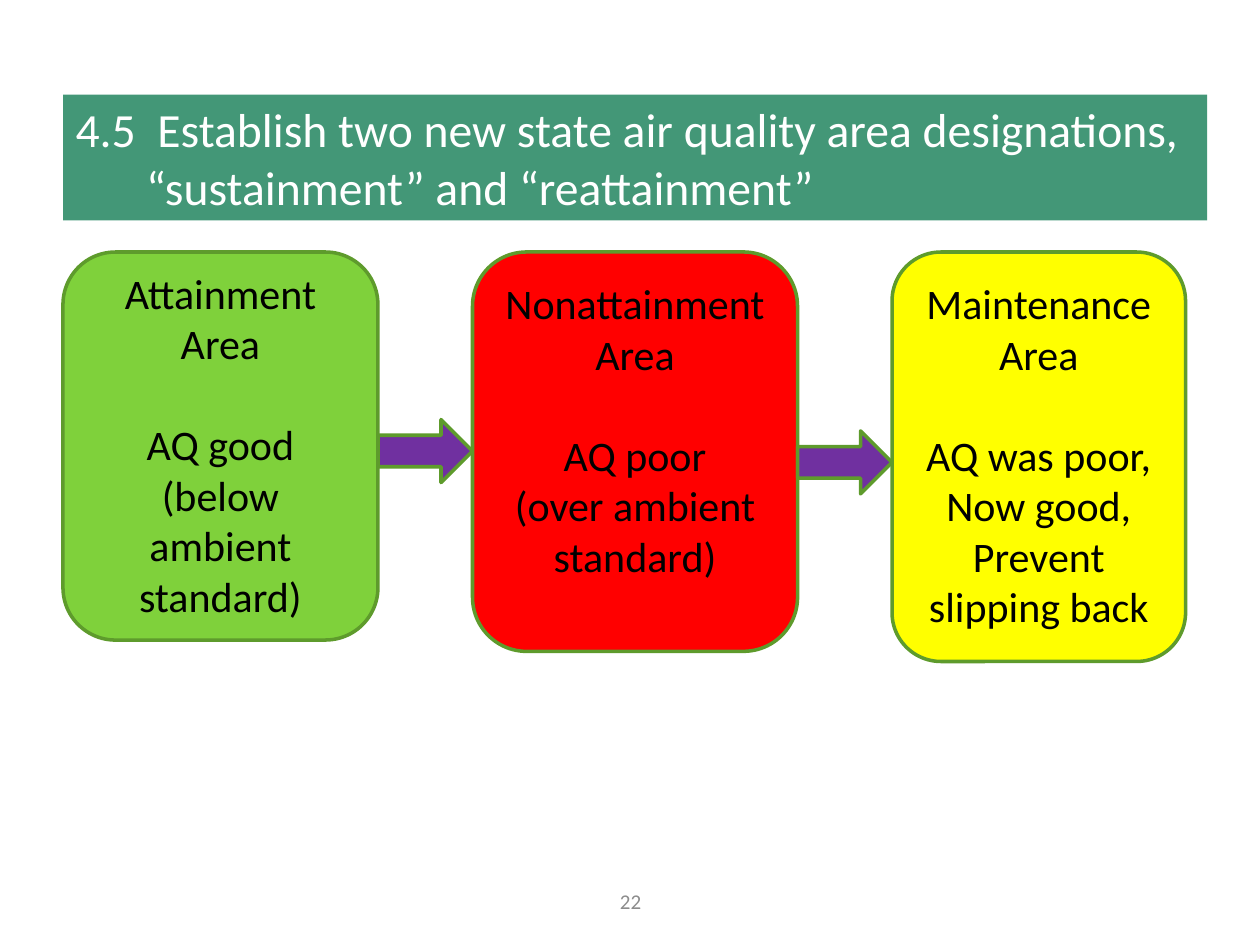
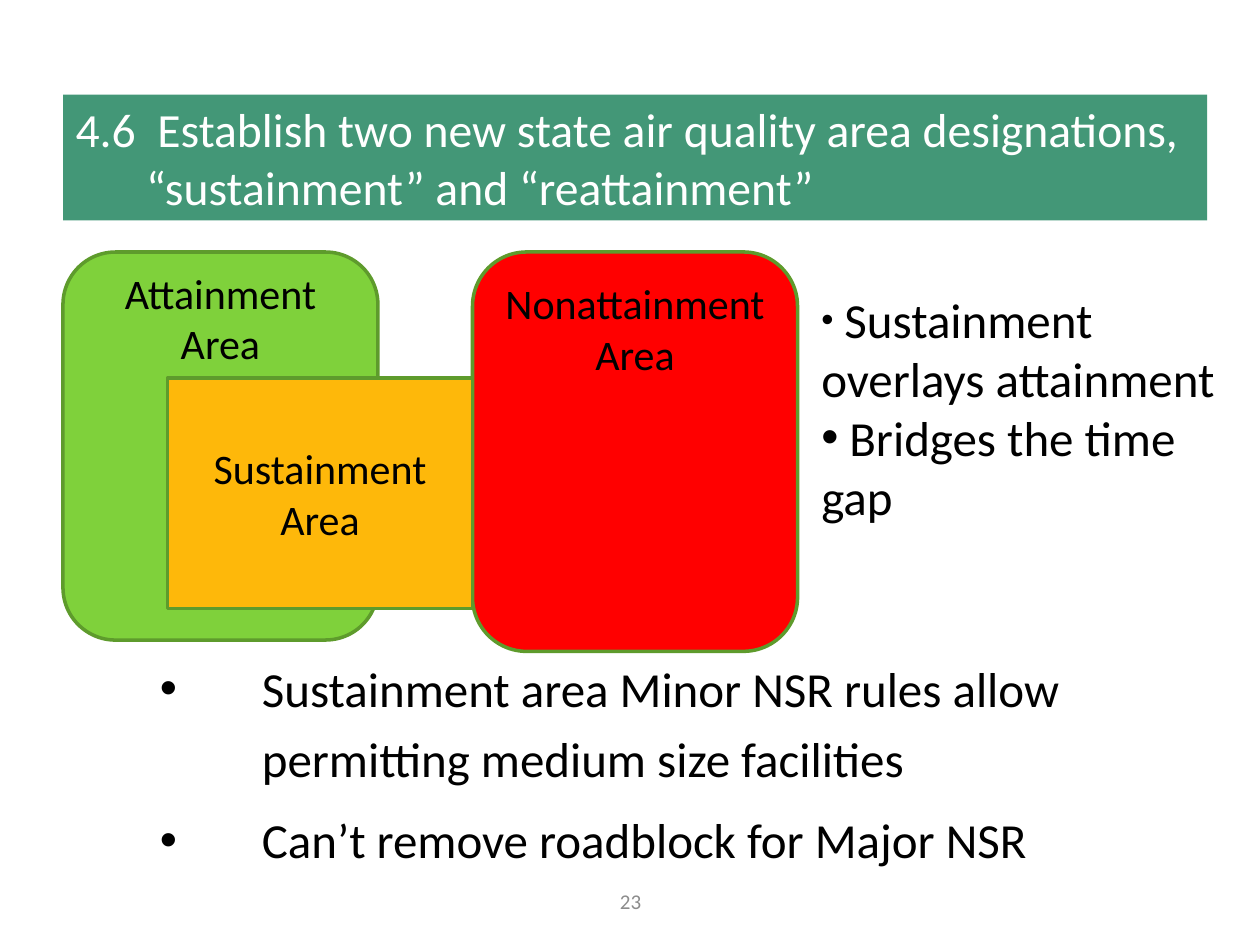
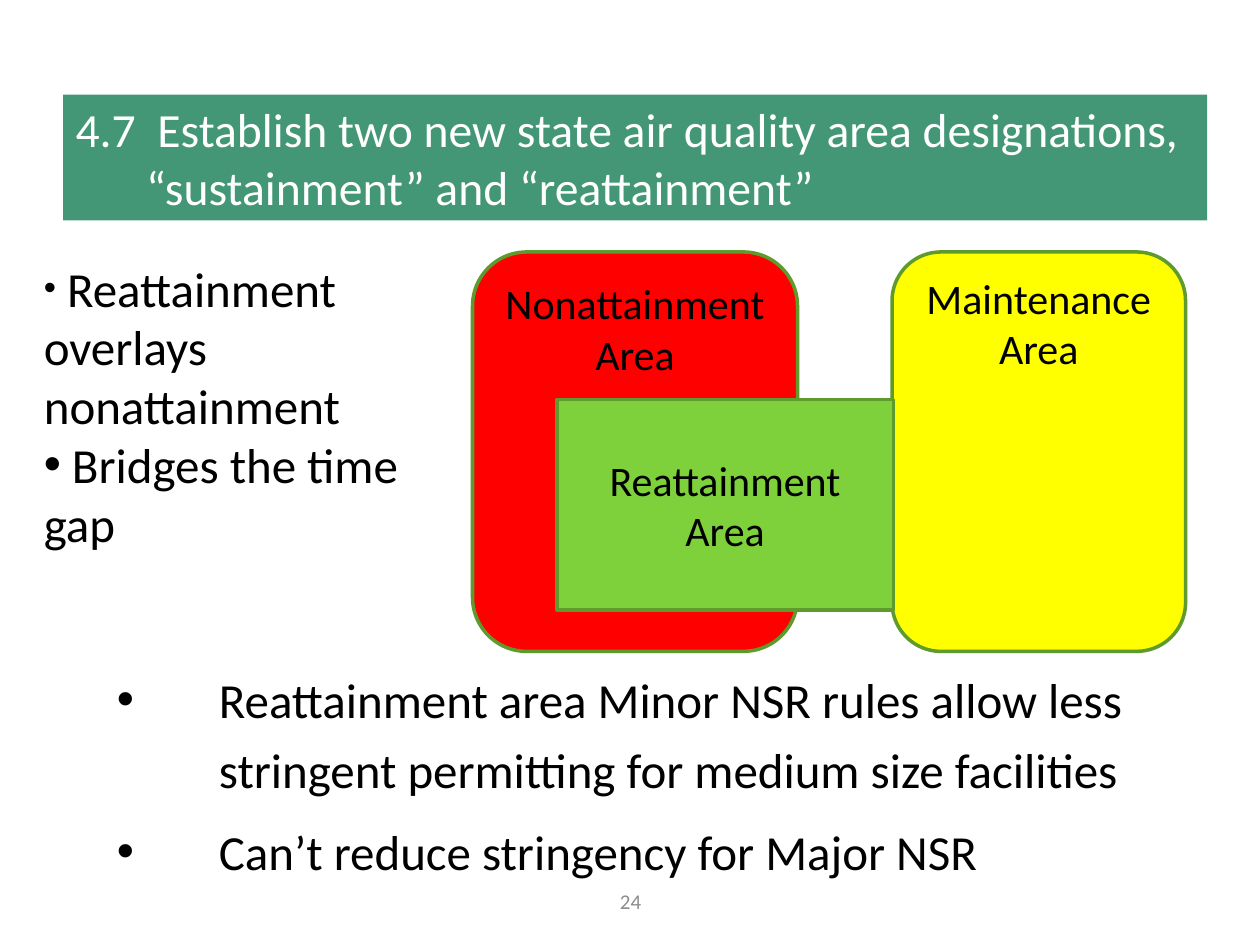
from dataclasses import dataclass, replace

from lxml import etree
from pptx import Presentation
from pptx import util as u
from pptx.dml.color import RGBColor
from pptx.enum import shapes, text
from pptx.oxml import ns

FONT = "Calibri"
COLORS = {
    "band": "439777",
    "white": "FFFFFF",
    "black": "000000",
    "grey": "8C8C8C",
    "outline": "5E9B2C",
    "green": "7FD13B",
    "red": "FF0000",
    "yellow": "FFFF00",
    "orange": "FEB80A",
    "purple": "7030A0",
}
TITLE = "Establish two new state air quality area designations, “sustainment” and “reattainment”"
TITLE_ONLY = 5
FIRST_PAGE = 22
AREA_TOP = 2
AREA_SIZE = 24
BULLET_SIZE = 28


@dataclass(frozen=True)
class Area:
    """A rounded area card; the gap parts its name from its details."""
    name: str
    left: float
    width: float
    height: float
    color: str
    inset: float
    details: tuple[str, ...] = ()


@dataclass(frozen=True)
class Block:
    """A plain shape, with or without a centred label."""
    kind: shapes.MSO_SHAPE
    left: float
    top: float
    width: float
    height: float
    color: str
    label: str = ""


@dataclass(frozen=True)
class Notes:
    """A bulleted text box."""
    left: float
    top: float
    width: float
    height: float
    lines: tuple[str, ...]
    hanging: bool = False


def rgb(color: str) -> RGBColor:
    return RGBColor.from_string(COLORS[color])


def style(para, size: float, color: str = "black", align=text.PP_ALIGN.CENTER) -> None:
    para.alignment = align
    for span in para.runs:
        span.font.name = FONT
        span.font.size = u.Pt(size)
        span.font.color.rgb = rgb(color)


def set_indent(para, margin: float, indent: float) -> None:
    properties = para._p.get_or_add_pPr()
    properties.set("marL", str(u.Inches(margin)))
    properties.set("indent", str(u.Inches(indent)))


def add_bullet(para, percent: int) -> None:
    properties = para._p.get_or_add_pPr()
    for tag, name, value in (("a:buSzPct", "val", str(percent * 1000)),
                             ("a:buFont", "typeface", "Arial"),
                             ("a:buChar", "char", "•")):
        etree.SubElement(properties, ns.qn(tag)).set(name, value)


def add_outlined(page, kind, left: float, top: float, width: float, height: float, color: str):
    box = page.shapes.add_shape(kind, u.Inches(left), u.Inches(top),
                                u.Inches(width), u.Inches(height))
    box.shadow.inherit = False
    box.fill.solid()
    box.fill.fore_color.rgb = rgb(color)
    box.line.color.rgb = rgb("outline")
    box.line.width = u.Pt(2)
    return box


def add_area(page, area: Area) -> None:
    box = add_outlined(page, shapes.MSO_SHAPE.ROUNDED_RECTANGLE, area.left, AREA_TOP,
                       area.width, area.height, area.color)
    frame = box.text_frame
    frame.vertical_anchor = text.MSO_ANCHOR.TOP
    frame.margin_top = u.Inches(area.inset)
    frame.margin_bottom = 0
    frame.text = "\n".join((area.name, *area.details))
    for number, para in enumerate(frame.paragraphs):
        style(para, AREA_SIZE)
        if number == 1:
            para.space_before = u.Pt(29)


def add_block(page, block: Block) -> None:
    box = add_outlined(page, block.kind, block.left, block.top,
                       block.width, block.height, block.color)
    if block.label:
        box.text_frame.text = block.label
        style(box.text_frame.paragraphs[0], AREA_SIZE)


def add_text(page, left: float, top: float, width: float, height: float, words: str):
    box = page.shapes.add_textbox(u.Inches(left), u.Inches(top),
                                  u.Inches(width), u.Inches(height))
    box.text_frame.word_wrap = True
    box.text_frame.text = words
    return box.text_frame


def add_notes(page, notes: Notes) -> None:
    frame = add_text(page, notes.left, notes.top, notes.width, notes.height,
                     "\n".join(notes.lines))
    for number, para in enumerate(frame.paragraphs):
        style(para, BULLET_SIZE, align=text.PP_ALIGN.LEFT)
        if notes.hanging:
            para.line_spacing = 1.2
            para.space_after = u.Pt(6)
            set_indent(para, 1.31, -0.81)
        small = number == 0 and not notes.hanging
        add_bullet(para, 71 if small else 100)


def add_page(deck, number: int):
    """Add a slide with the title band and the page number."""
    page = deck.slides.add_slide(deck.slide_layouts[TITLE_ONLY])
    band = page.shapes.title
    band.left, band.top = u.Inches(0.5), u.Inches(0.75)
    band.width, band.height = u.Inches(9.08), u.Inches(1)
    band.fill.solid()
    band.fill.fore_color.rgb = rgb("band")
    frame = band.text_frame
    frame.text = f"4.{number + 5}  {TITLE}"
    frame.word_wrap = True
    frame.auto_size = text.MSO_AUTO_SIZE.NONE
    frame.vertical_anchor = text.MSO_ANCHOR.MIDDLE
    para = frame.paragraphs[0]
    style(para, 27.2, "white", text.PP_ALIGN.LEFT)
    para.space_after = u.Pt(6)
    set_indent(para, 0.56, -0.56)

    footer = add_text(page, 3.42, 6.95, 3.17, 0.4, str(FIRST_PAGE + number))
    footer.vertical_anchor = text.MSO_ANCHOR.MIDDLE
    style(footer.paragraphs[0], 12, "grey")
    return page


ATTAINMENT = Area("Attainment Area", 0.5, 2.5, 3.08, "green", 0)
NONATTAINMENT = Area("Nonattainment Area", 3.75, 2.58, 3.17, "red", 0.08)
MAINTENANCE = Area("Maintenance Area", 7.08, 2.33, 3.17, "yellow", 0.05)

ARROW = Block(shapes.MSO_SHAPE.RIGHT_ARROW, 3, 3.33, 0.75, 0.5, "purple")
RECTANGLE = shapes.MSO_SHAPE.RECTANGLE

PAGES = (
    (
        replace(ATTAINMENT, details=("AQ good", "(below ambient standard)")),
        replace(NONATTAINMENT, details=("AQ poor", "(over ambient standard)")),
        replace(MAINTENANCE, height=3.25, inset=0.09,
                details=("AQ was poor,", "Now good,", "Prevent slipping back")),
        ARROW,
        replace(ARROW, left=6.33, top=3.42),
    ),
    (
        Notes(0.67, 5.08, 9.08, 1.92,
              ("Sustainment area Minor NSR rules allow permitting medium size facilities",
               "Can’t remove roadblock for Major NSR"), hanging=True),
        ATTAINMENT,
        NONATTAINMENT,
        Block(RECTANGLE, 1.33, 3, 2.42, 1.83, "orange", "Sustainment Area"),
        Notes(6.42, 2.25, 3.33, 2.29,
              (" Sustainment overlays attainment", " Bridges the time gap")),
    ),
    (
        NONATTAINMENT,
        MAINTENANCE,
        Notes(0.25, 2, 3.33, 2.76,
              (" Reattainment overlays nonattainment", " Bridges the time gap")),
        Block(RECTANGLE, 4.42, 3.17, 2.67, 1.67, "green", "Reattainment Area"),
        Notes(0.33, 5.17, 8.83, 1.88,
              ("Reattainment area Minor NSR rules allow less stringent permitting "
               "for medium size facilities",
               "Can’t reduce stringency for Major NSR"), hanging=True),
    ),
)
DRAW = {Area: add_area, Block: add_block, Notes: add_notes}


def main() -> None:
    deck = Presentation()
    deck.slide_width, deck.slide_height = u.Inches(10), u.Inches(7.5)
    for number, items in enumerate(PAGES):
        page = add_page(deck, number)
        for item in items:
            DRAW[type(item)](page, item)
    deck.save("out.pptx")


if __name__ == "__main__":
    main()
